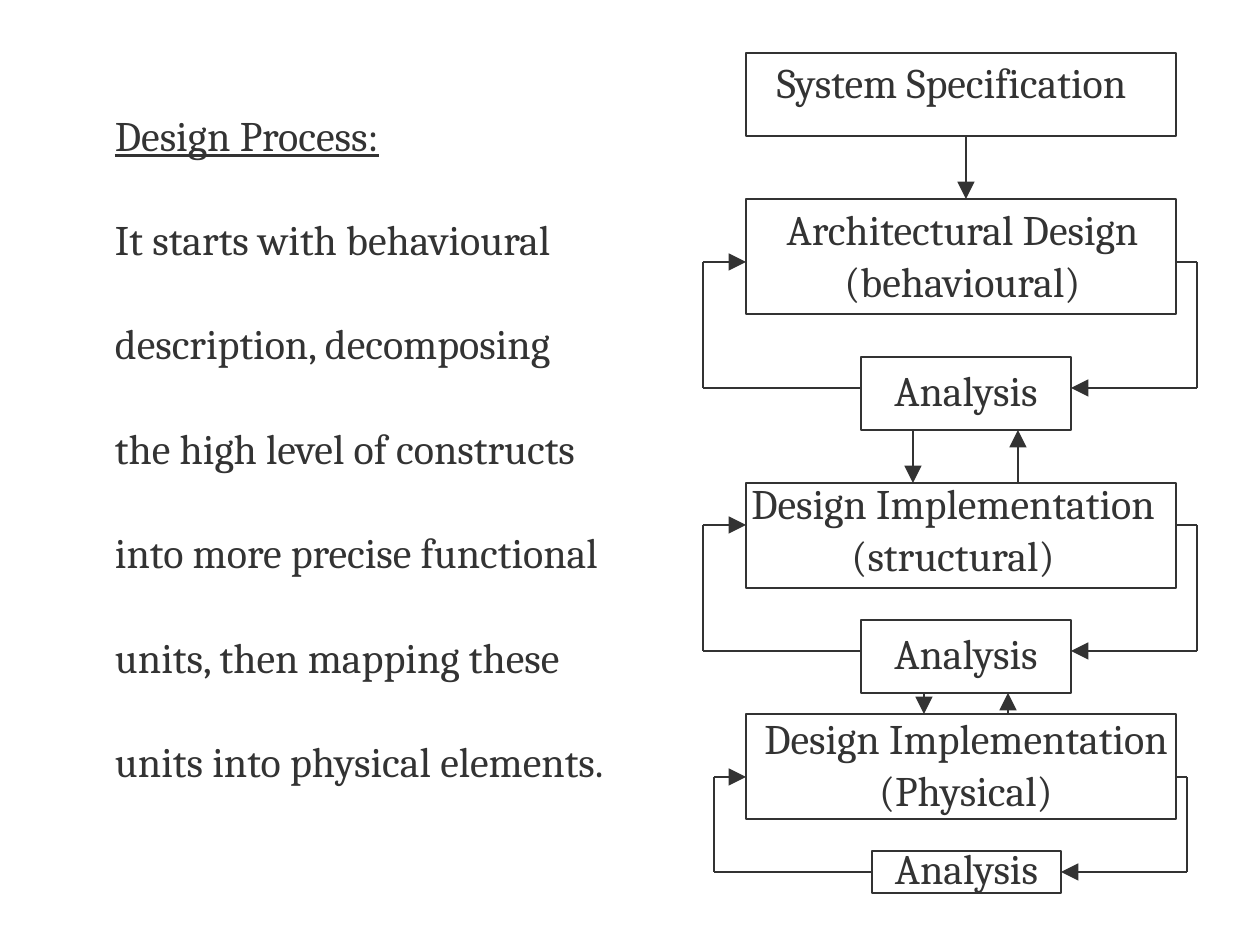
from lxml.etree import SubElement
from pptx import Presentation
from pptx.dml.color import RGBColor
from pptx.enum.shapes import MSO_CONNECTOR, MSO_SHAPE
from pptx.enum.text import MSO_ANCHOR, MSO_AUTO_SIZE, PP_ALIGN
from pptx.oxml.ns import qn
from pptx.util import Emu, Pt

INK = RGBColor(0x33, 0x33, 0x33)
FONT = "Cambria"
SCALE = 914400 / 126
LEFT, RIGHT = 746, 1176


def px(size):
    return Emu(round(size * SCALE))


class Page:
    def __init__(self, deck):
        self.slide = deck.slides.add_slide(deck.slide_layouts[1])
        self.shapes = self.slide.shapes

    def label(self, shape, lines, align=PP_ALIGN.CENTER,
              anchor=MSO_ANCHOR.TOP, gap=5.4, under=False):
        frame = shape.text_frame
        frame.word_wrap = True
        frame.auto_size = MSO_AUTO_SIZE.NONE
        frame.vertical_anchor = anchor
        frame.margin_left = frame.margin_right = px(2)
        frame.margin_top = frame.margin_bottom = px(6)
        for i, line in enumerate(lines):
            para = frame.add_paragraph() if i else frame.paragraphs[0]
            para.alignment = align
            para.line_spacing = 0.85
            para.space_before = Pt(gap if i else 0)
            run = para.add_run()
            run.text = line
            run.font.name = FONT
            run.font.size = Pt(24)
            run.font.underline = under
            run.font.color.rgb = INK

    def fill(self, holder, x, y, w, h, lines, gap=0, under=False):
        holder.left, holder.top = px(x), px(y)
        holder.width, holder.height = px(w), px(h)
        self.label(holder, lines, PP_ALIGN.LEFT, gap=gap, under=under)
        for para in holder.text_frame.paragraphs:
            props = para._p.get_or_add_pPr()
            props.set("marL", "0")
            props.set("indent", "0")
            SubElement(props, qn("a:buNone"))

    def text(self, x, y, w, h, lines, align=PP_ALIGN.CENTER):
        box = self.shapes.add_textbox(px(x), px(y), px(w), px(h))
        self.label(box, lines, align)

    def box(self, x, y, w, h, lines=()):
        box = self.shapes.add_shape(
            MSO_SHAPE.ROUNDED_RECTANGLE, px(x), px(y), px(w), px(h))
        box.adjustments[0] = 0
        box.shadow.inherit = False
        box.fill.background()
        box.line.color.rgb = INK
        box.line.width = Pt(0.75)
        self.label(box, lines, anchor=MSO_ANCHOR.MIDDLE)

    def line(self, start, end, head=False):
        line = self.shapes.add_connector(
            MSO_CONNECTOR.STRAIGHT, px(start[0]), px(start[1]),
            px(end[0]), px(end[1]))
        line.line.color.rgb = INK
        line.line.width = Pt(0.75)
        props = line._element.spPr
        if head:
            SubElement(props.find(qn("a:ln")), qn("a:tailEnd"),
                       type="triangle", w="lg", len="lg")
        SubElement(props, qn("a:effectLst"))

    def route(self, *points):
        last = len(points) - 2
        for i, pair in enumerate(zip(points, points[1:])):
            self.line(*pair, head=i == last)

    def loop(self, top, low, inner, outer):
        self.route((inner[0], low), (outer[0], low),
                   (outer[0], top), (LEFT, top))
        self.route((RIGHT, top), (outer[1], top),
                   (outer[1], low), (inner[1], low))


def main():
    deck = Presentation()
    deck.slide_width, deck.slide_height = px(1260), px(945)
    page = Page(deck)

    title, body = page.slide.placeholders
    page.fill(title, 113, 111, 524, 60, ["Design Process:"], under=True)
    page.fill(body, 113, 215, 524, 635, [
        "It starts with behavioural",
        "description, decomposing",
        "the high level of constructs",
        "into more precise functional",
        "units, then mapping these",
        "units into physical elements.",
    ], gap=35.2)

    for y, h in (53, 83), (199, 115), (483, 105), (714, 105):
        page.box(LEFT, y, RIGHT - LEFT, h)

    page.text(775, 58, 381, 63, ["System Specification"], PP_ALIGN.LEFT)
    for x, y, w, name, kind in (
        (775, 205, 375, "Architectural Design", "(behavioural)"),
        (743, 479, 420, "Design Implementation", "(structural)"),
        (756, 714, 420, "Design Implementation", "(Physical)"),
    ):
        page.text(x, y, w, 117, [name, kind])

    wide, slim = (861, 1071), (872, 1061)
    for y, h, top, low, inner, outer in (
        (357, 73, 262, 388, wide, (703, 1197)),
        (620, 73, 525, 651, wide, (703, 1197)),
        (851, 42, 777, 872, slim, (714, 1187)),
    ):
        page.box(inner[0], y, inner[1] - inner[0], h, ["Analysis"])
        page.loop(top, low, inner, outer)

    for x, start, end in (
        (966, 136, 199),
        (913, 430, 483), (1018, 483, 430),
        (924, 693, 714), (1008, 714, 693),
    ):
        page.line((x, start), (x, end), head=True)

    deck.save("out.pptx")


if __name__ == "__main__":
    main()
